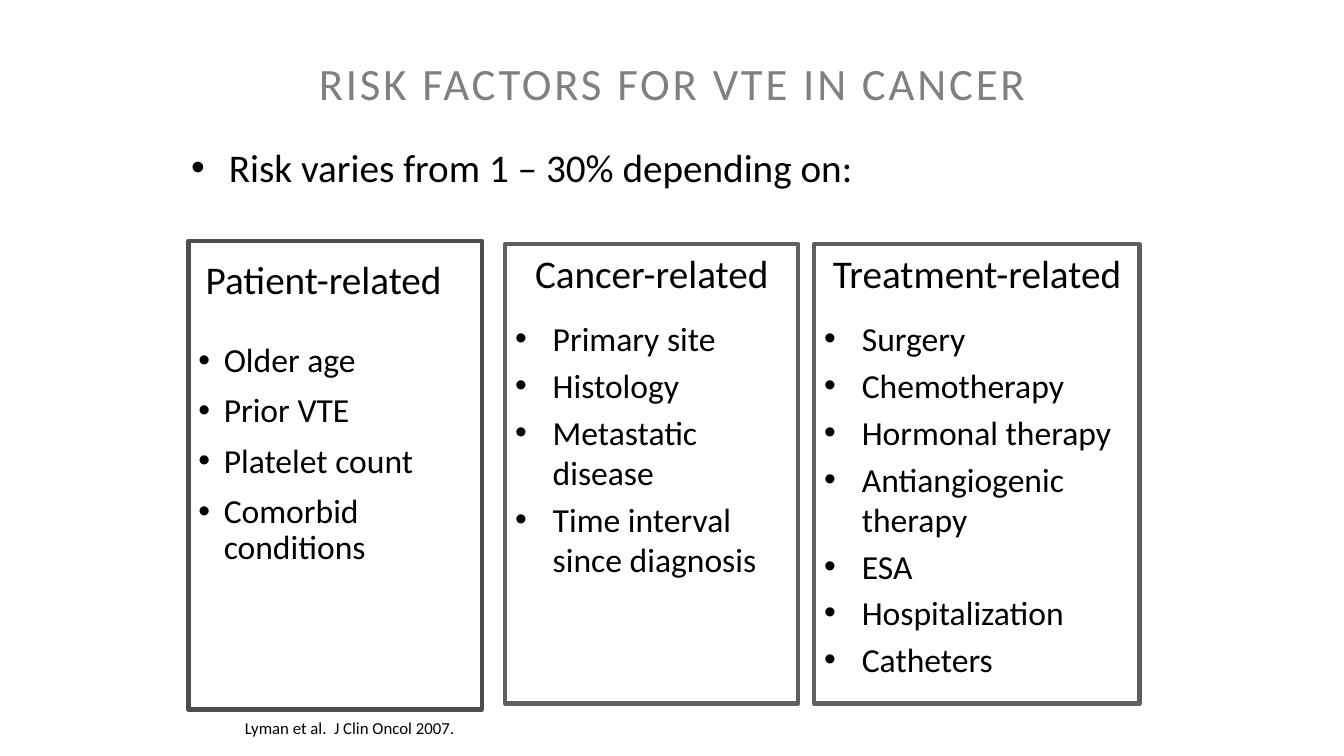
"""Build the slide on risk factors for VTE in cancer."""
import pptx
import pptx.dml.color
import pptx.enum.shapes
import pptx.enum.text
import pptx.oxml.ns
import pptx.util
from lxml import etree
from pptx.util import Cm, Pt

FONT = "Calibri"
COLORS = {
    "title": "808080",
    "text": "000000",
    "panel": "FFFFFF",
    "patient_frame": "4D4D4D",
    "frame": "5F5F5F",
}
CENTER = pptx.enum.text.PP_ALIGN.CENTER
LEFT = pptx.enum.text.PP_ALIGN.LEFT
MIDDLE = pptx.enum.text.MSO_ANCHOR.MIDDLE
TOP = pptx.enum.text.MSO_ANCHOR.TOP

PATIENT_FACTORS = ["Older age", "Prior VTE", "Platelet count", "Comorbid conditions"]
CANCER_FACTORS = ["Primary site", "Histology", "Metastatic disease",
                  "Time interval since diagnosis"]
TREATMENT_FACTORS = ["Surgery", "Chemotherapy", "Hormonal therapy",
                     "Antiangiogenic therapy", "ESA", "Hospitalization", "Catheters"]


def rgb(name):
    """Return the named colour."""
    return pptx.dml.color.RGBColor.from_string(COLORS[name])


def add_box(slide, left, top, width, height, fill=None, line=None):
    """Add a rectangle measured in centimetres, with optional fill and frame."""
    shape = slide.shapes.add_shape(
        pptx.enum.shapes.MSO_SHAPE.RECTANGLE, Cm(left), Cm(top), Cm(width), Cm(height))
    shape.shadow.inherit = False
    if fill:
        shape.fill.solid()
        shape.fill.fore_color.rgb = rgb(fill)
    else:
        shape.fill.background()
    if line:
        shape.line.color.rgb = rgb(line)
        shape.line.width = Pt(3)
    else:
        shape.line.fill.background()
    return shape


def add_text_box(slide, left, top, width, height):
    """Add a wrapping text box measured in centimetres."""
    shape = slide.shapes.add_textbox(Cm(left), Cm(top), Cm(width), Cm(height))
    shape.text_frame.word_wrap = True
    return shape


def add_bullet(paragraph, indent):
    """Give a paragraph a round bullet with a hanging indent in centimetres."""
    properties = paragraph._p.get_or_add_pPr()
    properties.set("marL", str(Cm(indent)))
    properties.set("indent", str(-Cm(indent)))
    font = etree.SubElement(properties, pptx.oxml.ns.qn("a:buFont"))
    font.set("typeface", "Arial")
    etree.SubElement(properties, pptx.oxml.ns.qn("a:buChar")).set("char", "•")


def write(paragraph, text, size, color="text", align=LEFT, line_spacing=1.0,
          before=0, after=0, indent=None):
    """Write one run into a paragraph and format both."""
    paragraph.alignment = align
    paragraph.line_spacing = line_spacing
    paragraph.space_before = Pt(before)
    paragraph.space_after = Pt(after)
    if indent:
        add_bullet(paragraph, indent)
    run = paragraph.add_run()
    run.text = text
    run.font.name = FONT
    run.font.size = Pt(size)
    run.font.color.rgb = rgb(color)
    return run


def fill_panel(shape, heading, factors, indent, line_spacing, before, heading_gap):
    """Write a centred heading and its bulleted factors into a panel."""
    frame = shape.text_frame
    frame.word_wrap = True
    frame.vertical_anchor = TOP
    write(frame.paragraphs[0], heading, 28, align=CENTER,
          line_spacing=line_spacing, after=heading_gap)
    for factor in factors:
        write(frame.add_paragraph(), factor, 24, line_spacing=line_spacing,
              before=before, indent=indent)


def add_title(slide, text):
    """Add the letter-spaced slide title."""
    shape = add_text_box(slide, 2.34, 1.37, 29.21, 1.57)
    shape.text_frame.vertical_anchor = MIDDLE
    run = write(shape.text_frame.paragraphs[0], text, 32, "title", CENTER, 0.9)
    run._r.get_or_add_rPr().set("spc", "200")


def main():
    """Create the presentation and save it."""
    presentation = pptx.Presentation()
    presentation.slide_width = Cm(33.87)
    presentation.slide_height = Cm(19.05)
    slide = presentation.slides.add_slide(presentation.slide_layouts[6])

    add_title(slide, "RISK FACTORS FOR VTE IN CANCER")

    patient_panel = add_box(slide, 4.75, 6.45, 6.81, 11.61, fill="panel")
    fill_panel(patient_panel, "Patient-related", PATIENT_FACTORS, 0.64, 0.9, 10, 18.8)

    citation = add_text_box(slide, 5.92, 17.96, 22.66, 0.76)
    write(citation.text_frame.paragraphs[0], "Lyman et al.  J Clin Oncol 2007.", 12)

    for left, width, heading, factors in [
        (12.73, 7.39, "Cancer-related", CANCER_FACTORS),
        (20.52, 8.2, "Treatment-related", TREATMENT_FACTORS),
    ]:
        panel = add_box(slide, left, 6.15, width, 11.58, line="frame")
        fill_panel(panel, heading, factors, 0.95, 1.0, 4.6, 11.2)

    summary = add_text_box(slide, 4.57, 3.61, 22.23, 11.2)
    write(summary.text_frame.paragraphs[0], "Risk varies from 1 – 30% depending on:", 28,
          line_spacing=0.9, indent=0.95)

    add_box(slide, 4.75, 6.07, 7.39, 11.81, line="patient_frame")

    presentation.save("out.pptx")


if __name__ == "__main__":
    main()
